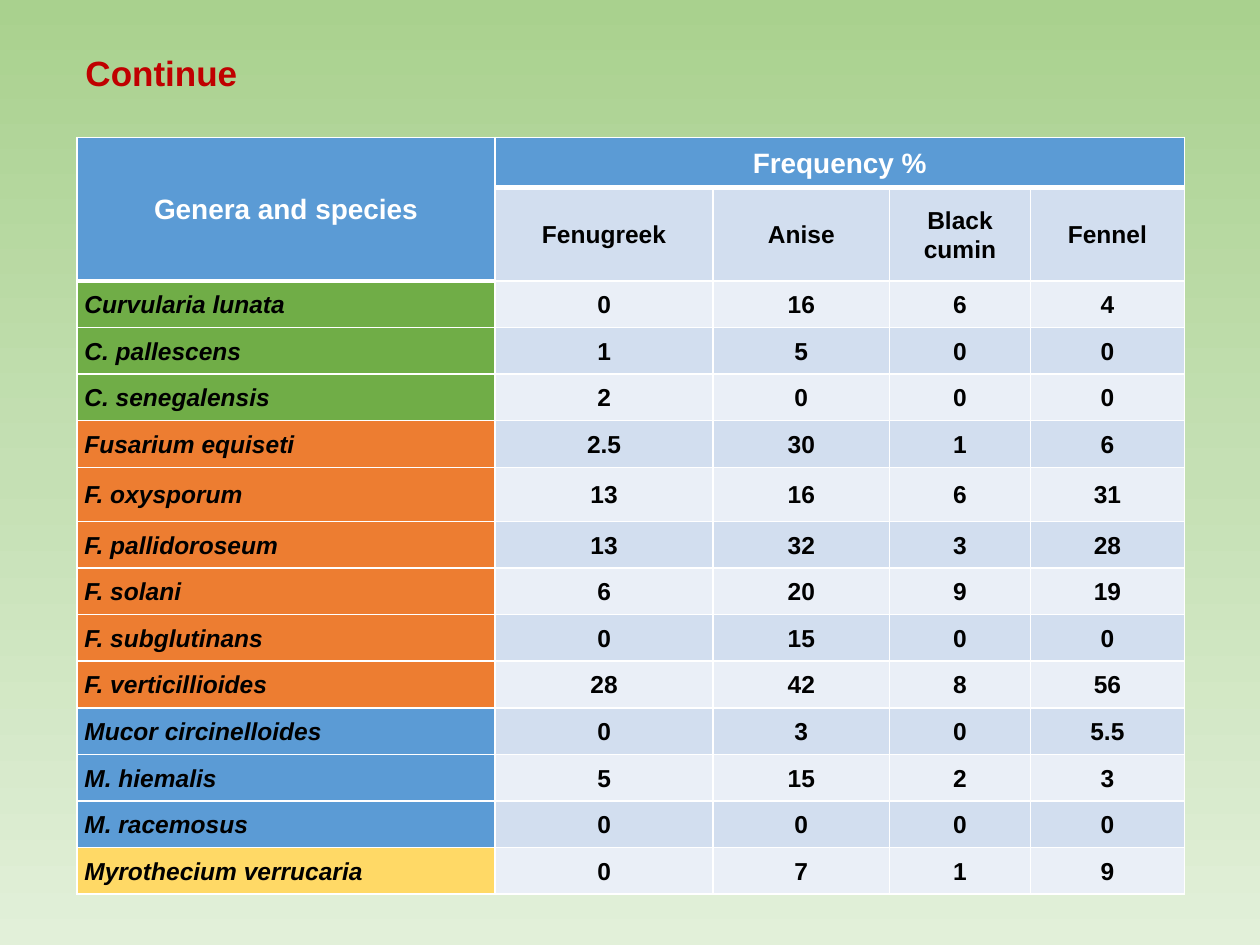
import copy

import pptx
import pptx.dml.color
import pptx.enum.text
import pptx.oxml.ns
import pptx.util
from lxml import etree

RGBColor = pptx.dml.color.RGBColor
BLACK = RGBColor(0x00, 0x00, 0x00)
WHITE = RGBColor(0xFF, 0xFF, 0xFF)
RED = RGBColor(0xC0, 0x00, 0x00)
BLUE = RGBColor(0x5B, 0x9B, 0xD5)
GREEN = RGBColor(0x70, 0xAD, 0x47)
ORANGE = RGBColor(0xED, 0x7D, 0x31)
YELLOW = RGBColor(0xFF, 0xD9, 0x66)
BANDS = (RGBColor(0xEA, 0xEF, 0xF7), RGBColor(0xD2, 0xDE, 0xEF))
BACKDROP = (
    RGBColor(0xA9, 0xD1, 0x8E),
    RGBColor(0xC5, 0xE0, 0xB4),
    RGBColor(0xE2, 0xF0, 0xD9),
)

FONT = "Arial"
COLUMN_WIDTHS = (3.32, 1.73, 1.4, 1.12, 1.22)
HEADER_HEIGHTS = (0.4, 0.74)
ROW_HEIGHT = 0.37
TALL_ROW_HEIGHT = 0.43
TALL_SPECIES = "F. oxysporum"
CROPS = ("Fenugreek", "Anise", "Black cumin", "Fennel")
GENERA = (
    (GREEN, (
        ("Curvularia lunata", "0", "16", "6", "4"),
        ("C. pallescens", "1", "5", "0", "0"),
        ("C. senegalensis", "2", "0", "0", "0"),
    )),
    (ORANGE, (
        ("Fusarium equiseti", "2.5", "30", "1", "6"),
        (TALL_SPECIES, "13", "16", "6", "31"),
        ("F. pallidoroseum", "13", "32", "3", "28"),
        ("F. solani", "6", "20", "9", "19"),
        ("F. subglutinans", "0", "15", "0", "0"),
        ("F. verticillioides", "28", "42", "8", "56"),
    )),
    (BLUE, (
        ("Mucor circinelloides", "0", "3", "0", "5.5"),
        ("M. hiemalis", "5", "15", "2", "3"),
        ("M. racemosus", "0", "0", "0", "0"),
    )),
    (YELLOW, (("Myrothecium verrucaria", "0", "7", "1", "9"),)),
)


def paint_background(slide):
    fill = slide.background.fill
    fill.gradient()
    fill.gradient_angle = 270
    first_stop = slide.element.find(".//" + pptx.oxml.ns.qn("a:gs"))
    first_stop.addnext(copy.deepcopy(first_stop))
    for index, (stop, color) in enumerate(zip(fill.gradient_stops, BACKDROP)):
        stop.position = index / 2
        stop.color.rgb = color


def style_paragraph(paragraph, size, color, spacing, italic=False):
    paragraph.line_spacing = spacing
    font = paragraph.font
    font.name = FONT
    font.size = pptx.util.Pt(size)
    font.bold = True
    font.italic = italic
    font.color.rgb = color


def add_title(slide, text):
    inch = pptx.util.Inches
    title = slide.shapes.add_textbox(inch(0.58), inch(0.13), inch(5.81), inch(0.94))
    frame = title.text_frame
    frame.word_wrap = True
    frame.vertical_anchor = pptx.enum.text.MSO_ANCHOR.MIDDLE
    frame.text = text
    style_paragraph(frame.paragraphs[0], 20, RED, 0.9)


def draw_borders(cell, top, bottom):
    qn = pptx.oxml.ns.qn
    properties = cell._tc.get_or_add_tcPr()
    sides = (("a:lnL", 1), ("a:lnR", 1), ("a:lnT", top), ("a:lnB", bottom))
    for position, (side, width) in enumerate(sides):
        line = etree.Element(qn(side), w=str(pptx.util.Pt(width)))
        solid = etree.SubElement(line, qn("a:solidFill"))
        etree.SubElement(solid, qn("a:srgbClr"), val=str(WHITE))
        properties.insert(position, line)


def fill_cell(cell, text, fill, size=14, color=BLACK, species=False):
    align = pptx.enum.text.PP_ALIGN
    cell.text = text
    cell.fill.solid()
    cell.fill.fore_color.rgb = fill
    cell.vertical_anchor = pptx.enum.text.MSO_ANCHOR.MIDDLE
    cell.margin_left = cell.margin_right = pptx.util.Inches(0.06)
    cell.margin_top = cell.margin_bottom = 0
    paragraph = cell.text_frame.paragraphs[0]
    paragraph.alignment = align.LEFT if species else align.CENTER
    style_paragraph(paragraph, size, color, 1.07, italic=species)


def add_frequency_table(slide):
    inch = pptx.util.Inches
    species_rows = [(color, row) for color, rows in GENERA for row in rows]
    heights = list(HEADER_HEIGHTS) + [
        TALL_ROW_HEIGHT if row[0] == TALL_SPECIES else ROW_HEIGHT
        for _, row in species_rows
    ]
    table = slide.shapes.add_table(
        len(heights), len(COLUMN_WIDTHS), inch(0.61), inch(1.09),
        inch(sum(COLUMN_WIDTHS)), inch(sum(heights)),
    ).table
    for column, width in zip(table.columns, COLUMN_WIDTHS):
        column.width = inch(width)
    for row, height in zip(table.rows, heights):
        row.height = inch(height)

    table.cell(0, 0).merge(table.cell(1, 0))
    table.cell(0, 1).merge(table.cell(0, len(CROPS)))
    fill_cell(table.cell(0, 0), "Genera and species", BLUE, 16, WHITE)
    fill_cell(table.cell(0, 1), "Frequency %", BLUE, 16, WHITE)
    for column, crop in enumerate(CROPS, 1):
        fill_cell(table.cell(1, column), crop, BANDS[1])
    for index, (genus_color, (species, *frequencies)) in enumerate(species_rows):
        row = index + len(HEADER_HEIGHTS)
        fill_cell(table.cell(row, 0), species, genus_color, species=True)
        for column, frequency in enumerate(frequencies, 1):
            fill_cell(table.cell(row, column), frequency, BANDS[index % 2])

    for row in range(len(heights)):
        for column in range(len(COLUMN_WIDTHS)):
            first_body_row = 1 if column else 2
            top = 3 if row == first_body_row else 1
            bottom = 3 if row < first_body_row else 1
            draw_borders(table.cell(row, column), top, bottom)


def main():
    deck = pptx.Presentation()
    deck.slide_width = pptx.util.Inches(10)
    deck.slide_height = pptx.util.Inches(7.5)
    slide = deck.slides.add_slide(deck.slide_layouts[6])
    paint_background(slide)
    add_title(slide, "Continue")
    add_frequency_table(slide)
    deck.save("out.pptx")


if __name__ == "__main__":
    main()
